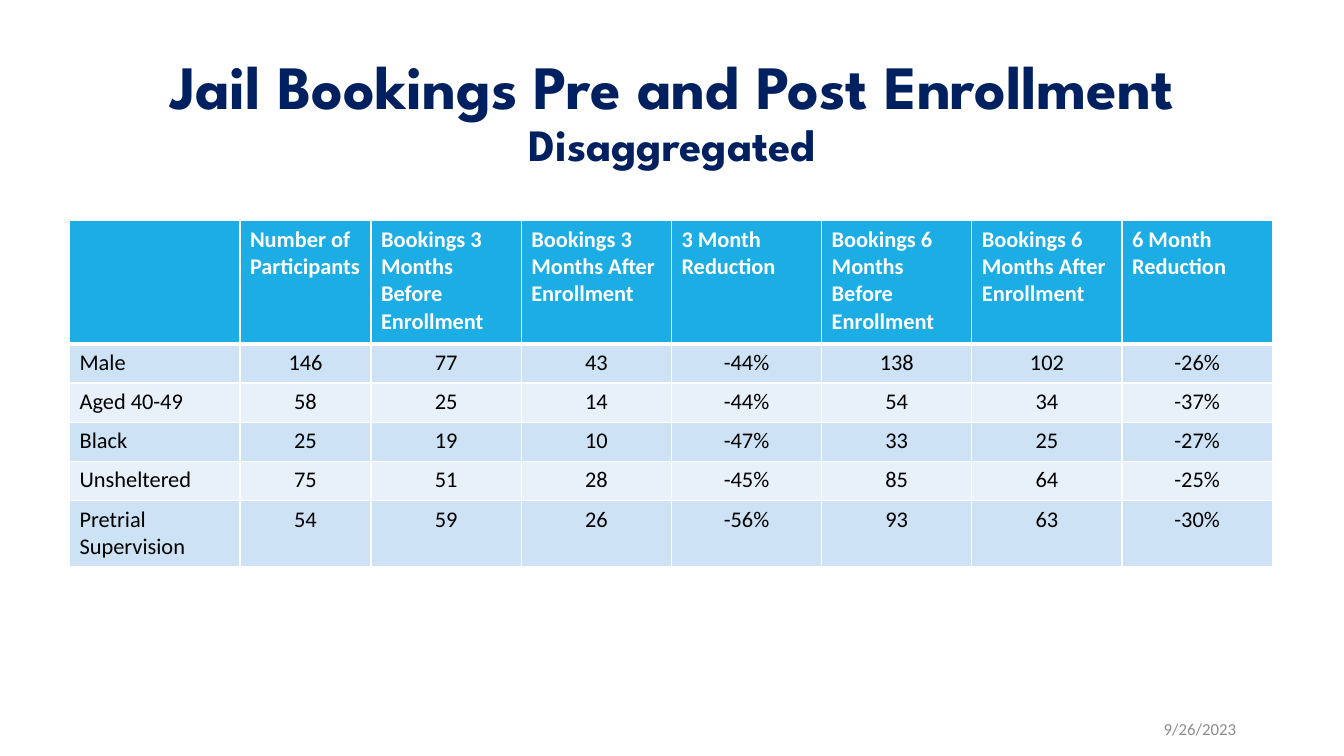
from typing import NamedTuple

from lxml import etree
from pptx import Presentation, util as u
from pptx.dml.color import RGBColor
from pptx.enum import text
from pptx.oxml.ns import qn

PX = u.Inches(1) // 100  # 100 px to the inch

COLORS = {
    "navy": "002060",
    "grey": "8C8C8C",
    "header": "1CADE4",
    "dark_band": "CDE3F5",
    "light_band": "E8F1FA",
    "white": "FFFFFF",
    "black": "000000",
}


class Line(NamedTuple):
    words: str
    size: int


class TextBox(NamedTuple):
    left: int
    top: int
    width: int
    height: int
    lines: list[Line]
    font: str
    color: str
    bold: bool
    align: text.PP_ALIGN
    spacing: float


BOXES = [
    TextBox(92, 40, 1150, 145,
            [Line("Jail Bookings Pre and Post Enrollment", 44), Line("Disaggregated", 32)],
            "League Spartan", "navy", True, text.PP_ALIGN.CENTER, 0.9),
    TextBox(936, 703, 300, 40, [Line("9/26/2023", 12)],
            "Calibri", "grey", False, text.PP_ALIGN.RIGHT, 1.0),
]

TABLE_LEFT, TABLE_TOP = 69, 219
COLUMN_WIDTHS = [169, 130] + [149] * 6
ROW_HEIGHTS = [122] + [39] * 4 + [65]
BOOKINGS = [
    ["", "Number of Participants",
     "Bookings 3 Months Before Enrollment", "Bookings 3 Months After Enrollment",
     "3 Month Reduction",
     "Bookings 6 Months Before Enrollment", "Bookings 6 Months After Enrollment",
     "6 Month Reduction"],
    ["Male", "146", "77", "43", "-44%", "138", "102", "-26%"],
    ["Aged 40-49", "58", "25", "14", "-44%", "54", "34", "-37%"],
    ["Black", "25", "19", "10", "-47%", "33", "25", "-27%"],
    ["Unsheltered", "75", "51", "28", "-45%", "85", "64", "-25%"],
    ["Pretrial Supervision", "54", "59", "26", "-56%", "93", "63", "-30%"],
]


def rgb(name: str) -> RGBColor:
    return RGBColor.from_string(COLORS[name])


def style_font(font, name: str, size: int, color: str, bold: bool) -> None:
    font.name = name
    font.size = u.Pt(size)
    font.bold = bold
    font.color.rgb = rgb(color)


def add_text(page, item: TextBox) -> None:
    box = page.shapes.add_textbox(item.left * PX, item.top * PX,
                                  item.width * PX, item.height * PX)
    frame = box.text_frame
    frame.word_wrap = True
    frame.vertical_anchor = text.MSO_ANCHOR.MIDDLE
    para = frame.paragraphs[0]
    para.text = "\v".join(line.words for line in item.lines)
    para.alignment = item.align
    para.line_spacing = item.spacing
    for span, line in zip(para.runs, item.lines):
        style_font(span.font, item.font, line.size, item.color, item.bold)


def add_borders(cell, top: int, bottom: int) -> None:
    """Give the cell white edges; top and bottom are in points, the sides 1 pt."""
    properties = cell._tc.get_or_add_tcPr()
    for tag, points in (("a:lnL", 1), ("a:lnR", 1), ("a:lnT", top), ("a:lnB", bottom)):
        edge = etree.SubElement(properties, qn(tag), w=str(u.Pt(points)))
        fill = etree.SubElement(edge, qn("a:solidFill"))
        etree.SubElement(fill, qn("a:srgbClr"), val=COLORS["white"])


def fill_cell(cell, words: str, row: int, column: int) -> None:
    header = row == 0
    add_borders(cell, top=3 if row == 1 else 1, bottom=3 if header else 1)
    band = "header" if header else ("light_band", "dark_band")[row % 2]
    cell.fill.solid()
    cell.fill.fore_color.rgb = rgb(band)
    para = cell.text_frame.paragraphs[0]
    para.text = words
    centred = not header and column > 0
    para.alignment = text.PP_ALIGN.CENTER if centred else text.PP_ALIGN.LEFT
    for span in para.runs:
        style_font(span.font, "Calibri", 16, "white" if header else "black", header)


def add_bookings_table(page) -> None:
    table = page.shapes.add_table(
        len(ROW_HEIGHTS), len(COLUMN_WIDTHS), TABLE_LEFT * PX, TABLE_TOP * PX,
        sum(COLUMN_WIDTHS) * PX, sum(ROW_HEIGHTS) * PX).table
    table.horz_banding = False
    for column, width in zip(table.columns, COLUMN_WIDTHS):
        column.width = width * PX
    for row, height in zip(table.rows, ROW_HEIGHTS):
        row.height = height * PX
    for row, values in enumerate(BOOKINGS):
        for column, words in enumerate(values):
            fill_cell(table.cell(row, column), words, row, column)


def main() -> None:
    deck = Presentation()
    deck.slide_width, deck.slide_height = 1333 * PX, 750 * PX
    page = deck.slides.add_slide(deck.slide_layouts[6])
    for item in BOXES:
        add_text(page, item)
    add_bookings_table(page)
    deck.save("out.pptx")


if __name__ == "__main__":
    main()
